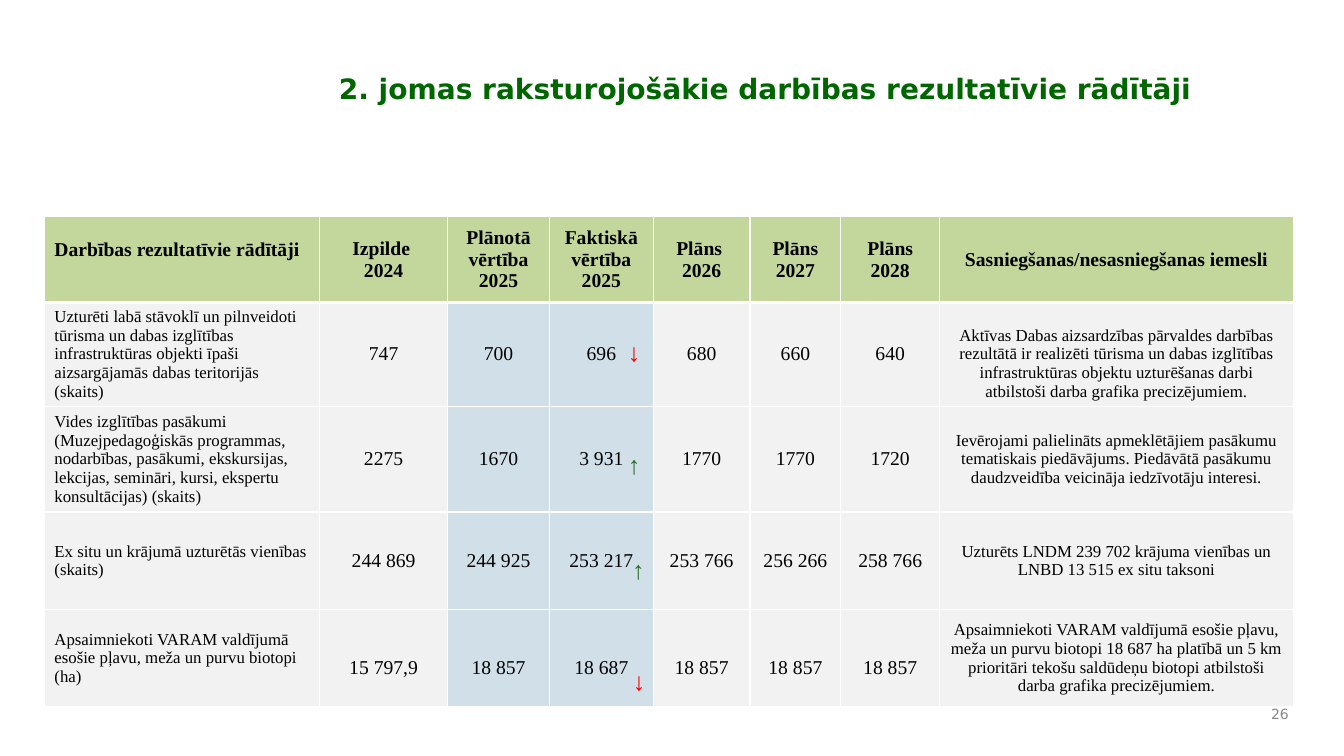
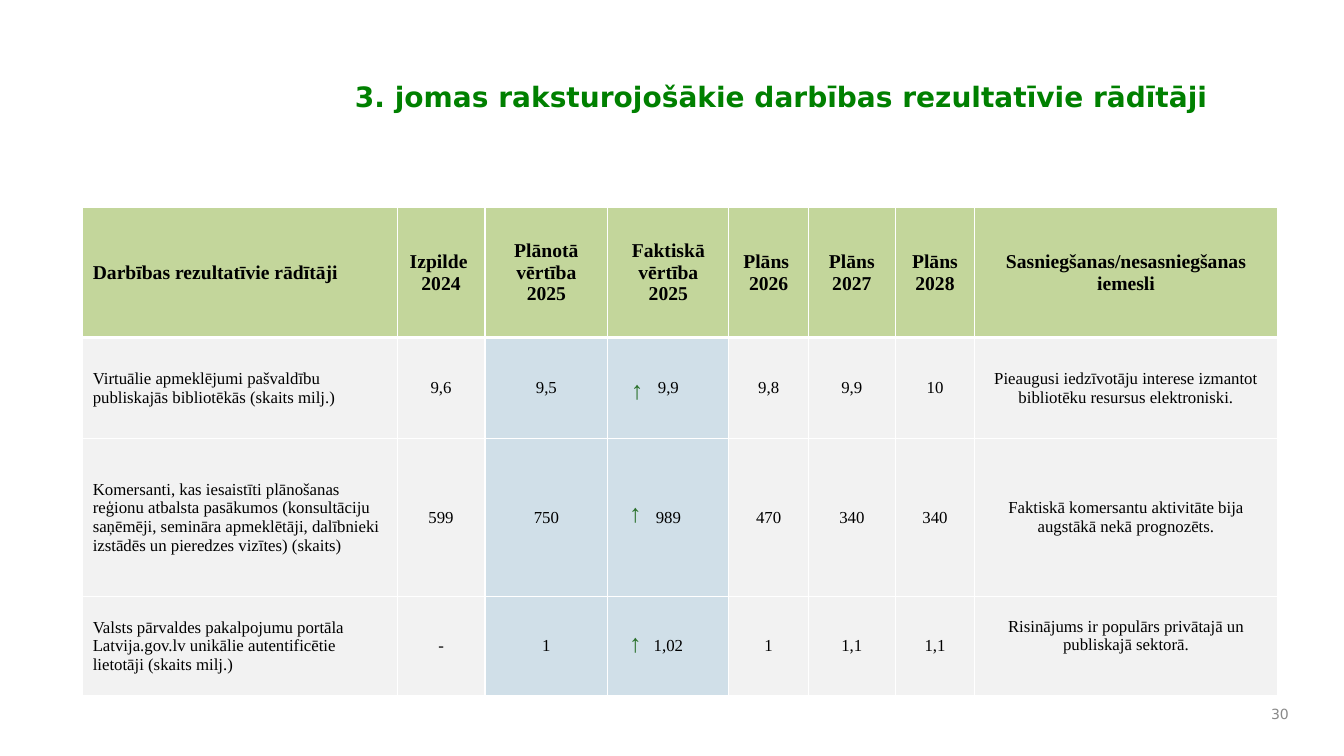
from lxml import etree
from pptx import Presentation
from pptx.dml.color import RGBColor
from pptx.enum import text as t
from pptx.oxml import ns
from pptx.util import Inches, Pt

HEAD, PALE, BLUE, WHITE = "C3D69B", "F2F2F2", "D0DFE8", "FFFFFF"
UP, DOWN = "29702A", "FF0000"
SERIF, SANS = "Times New Roman", "DejaVu Sans"
LEFT, MID, RIGHT = t.PP_ALIGN.LEFT, t.PP_ALIGN.CENTER, t.PP_ALIGN.RIGHT
LABELS = [
    "Darbības rezultatīvie rādītāji", "Izpilde \n2024",
    "Plānotā vērtība\n2025", "Faktiskā vērtība\n2025",
    "Plāns \n2026", "Plāns 2027", "Plāns 2028",
    "Sasniegšanas/nesasniegšanas iemesli",
]


def color(code):
    return RGBColor.from_string(code)


def style(frame, size, face, code, bold=False, align=LEFT):
    for para in frame.paragraphs:
        para.alignment = align
        font = para.font
        font.size, font.name, font.bold = Pt(size), face, bold
        font.color.rgb = color(code)


def label(slide, box, words, *look, anchor=t.MSO_ANCHOR.MIDDLE):
    shape = slide.shapes.add_textbox(*map(Inches, box))
    frame = shape.text_frame
    frame.word_wrap = True
    frame.vertical_anchor = anchor
    frame.text = words
    style(frame, *look)
    return shape


def arrow(slide, left, top, code):
    """Trend mark; the falling one is the rising one turned over."""
    shape = label(slide, (left, top, 0.32, 0.4), "↑", 18, "Arial", code, True,
                  anchor=t.MSO_ANCHOR.TOP)
    shape.rotation = 180 if code == DOWN else 0


def nudge(cell, step):
    """Move centred cell text down (or up, if negative) by step inches."""
    cell.margin_top = Inches(max(0, 2 * step))
    cell.margin_bottom = Inches(max(0, -2 * step))


def border(cell, row):
    """White lines, with a heavy one between the header and the body."""
    widths = dict(lnL=1, lnR=1, lnT=3 if row == 1 else 1,
                  lnB=3 if row == 0 else 1)
    props = cell._tc.get_or_add_tcPr()
    for place, (side, width) in enumerate(widths.items()):
        line = etree.Element(ns.qn("a:" + side), w=str(Pt(width)))
        fill = etree.SubElement(line, ns.qn("a:solidFill"))
        etree.SubElement(fill, ns.qn("a:srgbClr"), val=WHITE)
        props.insert(place, line)


def grid(slide, left, top, cols, rows, body, size, shifts):
    box = map(Inches, (left, top, sum(cols), sum(rows)))
    table = slide.shapes.add_table(len(rows), len(cols), *box).table
    for col, width in zip(table.columns, cols):
        col.width = Inches(width)
    for row, height in zip(table.rows, rows):
        row.height = Inches(height)
    for r, line in enumerate([LABELS] + body):
        for c, words in enumerate(line):
            cell = table.cell(r, c)
            cell.text = words
            cell.vertical_anchor = t.MSO_ANCHOR.MIDDLE
            cell.fill.solid()
            fill = HEAD if r == 0 else BLUE if c in (2, 3) else PALE
            cell.fill.fore_color.rgb = color(fill)
            points = 14 if r == 0 else size if 0 < c < 7 else 12
            style(cell.text_frame, points, SERIF, "000000", r == 0,
                  MID if c else LEFT)
            nudge(cell, shifts.get((r, c), 0))
            border(cell, r)


def page(deck, number, title, box, tone, table, marks):
    slide = deck.slides.add_slide(deck.slide_layouts[6])
    label(slide, (12.44, 6.92, 0.44, 0.33), number, 10, SANS, "898989",
          False, RIGHT)
    label(slide, box, title, 20, SANS, tone, True, MID)
    grid(slide, **table)
    for mark in marks:
        arrow(slide, *mark)


# Area 2: nature and environment
NATURE = dict(
    left=0.44, top=2.15, size=14,
    cols=[2.73, 1.27, 1.01, 1.03, 0.96, 0.9, 0.98, 3.51],
    rows=[0.85, 1.03, 1.05, 0.97, 0.96],
    shifts={(0, 0): -0.1, (1, 7): 0.09, **{(4, c): 0.1 for c in range(1, 7)}},
    body=[
        ["Uzturēti labā stāvoklī un pilnveidoti tūrisma un dabas izglītības "
         "infrastruktūras objekti īpaši aizsargājamās dabas teritorijās "
         "(skaits)",
         "747", "700", "696", "680", "660", "640",
         "Aktīvas Dabas aizsardzības pārvaldes darbības rezultātā ir "
         "realizēti tūrisma un dabas izglītības infrastruktūras objektu "
         "uzturēšanas darbi atbilstoši darba grafika precizējumiem."],
        ["Vides izglītības pasākumi (Muzejpedagoģiskās programmas, "
         "nodarbības, pasākumi, ekskursijas, lekcijas, semināri, kursi, "
         "ekspertu konsultācijas) (skaits)",
         "2275", "1670", "3 931", "1770", "1770", "1720",
         "Ievērojami palielināts apmeklētājiem pasākumu tematiskais "
         "piedāvājums. Piedāvātā pasākumu daudzveidība veicināja "
         "iedzīvotāju interesi."],
        ["Ex situ un krājumā uzturētās vienības (skaits)",
         "244 869", "244 925", "253 217", "253 766", "256 266", "258 766",
         "Uzturēts LNDM 239 702 krājuma vienības un LNBD 13 515 ex situ "
         "taksoni"],
        ["Apsaimniekoti VARAM valdījumā esošie pļavu, meža un purvu biotopi "
         "(ha)",
         "15 797,9", "18 857", "18 687", "18 857", "18 857", "18 857",
         "Apsaimniekoti VARAM valdījumā esošie pļavu, meža un purvu biotopi "
         "18 687 ha platībā un 5 km prioritāri tekošu saldūdeņu biotopi "
         "atbilstoši darba grafika precizējumiem."],
    ])

# Area 3: regions and digital services
REGION = dict(
    left=0.82, top=2.06, size=12,
    cols=[3.12, 0.87, 1.22, 1.2, 0.79, 0.86, 0.79, 3],
    rows=[1.29, 1, 1.57, 0.98],
    shifts={(3, 7): -0.1},
    body=[
        ["Virtuālie apmeklējumi pašvaldību publiskajās bibliotēkās (skaits "
         "milj.)",
         "9,6", "9,5", "9,9", "9,8", "9,9", "10",
         "Pieaugusi iedzīvotāju interese izmantot bibliotēku resursus "
         "elektroniski."],
        ["Komersanti, kas iesaistīti plānošanas reģionu atbalsta pasākumos "
         "(konsultāciju saņēmēji, semināra apmeklētāji, dalībnieki izstādēs "
         "un pieredzes vizītes) (skaits)",
         "599", "750", "989", "470", "340", "340",
         "Faktiskā komersantu aktivitāte bija augstākā nekā prognozēts."],
        ["Valsts pārvaldes pakalpojumu portāla Latvija.gov.lv unikālie "
         "autentificētie lietotāji (skaits milj.)",
         "-", "1", "1,02", "1", "1,1", "1,1",
         "Risinājums ir populārs privātajā un publiskajā sektorā."],
    ])


def main():
    deck = Presentation()
    deck.slide_width, deck.slide_height = Inches(13.33), Inches(7.5)
    page(deck, "26", "2. jomas raksturojošākie darbības rezultatīvie rādītāji",
         (2.68, 0.52, 9.82, 0.71), "006600", NATURE,
         [(6.13, 4.41, UP), (6.17, 5.45, UP),
          (6.13, 3.36, DOWN), (6.18, 6.62, DOWN)])
    page(deck, "30", "3. jomas raksturojošākie darbības rezultatīvie rādītāji",
         (2.84, 0.29, 9.82, 1.33), "008000", REGION,
         [(6.14, 4.88, UP), (6.14, 6.17, UP), (6.16, 3.66, UP)])
    deck.save("out.pptx")


if __name__ == "__main__":
    main()
